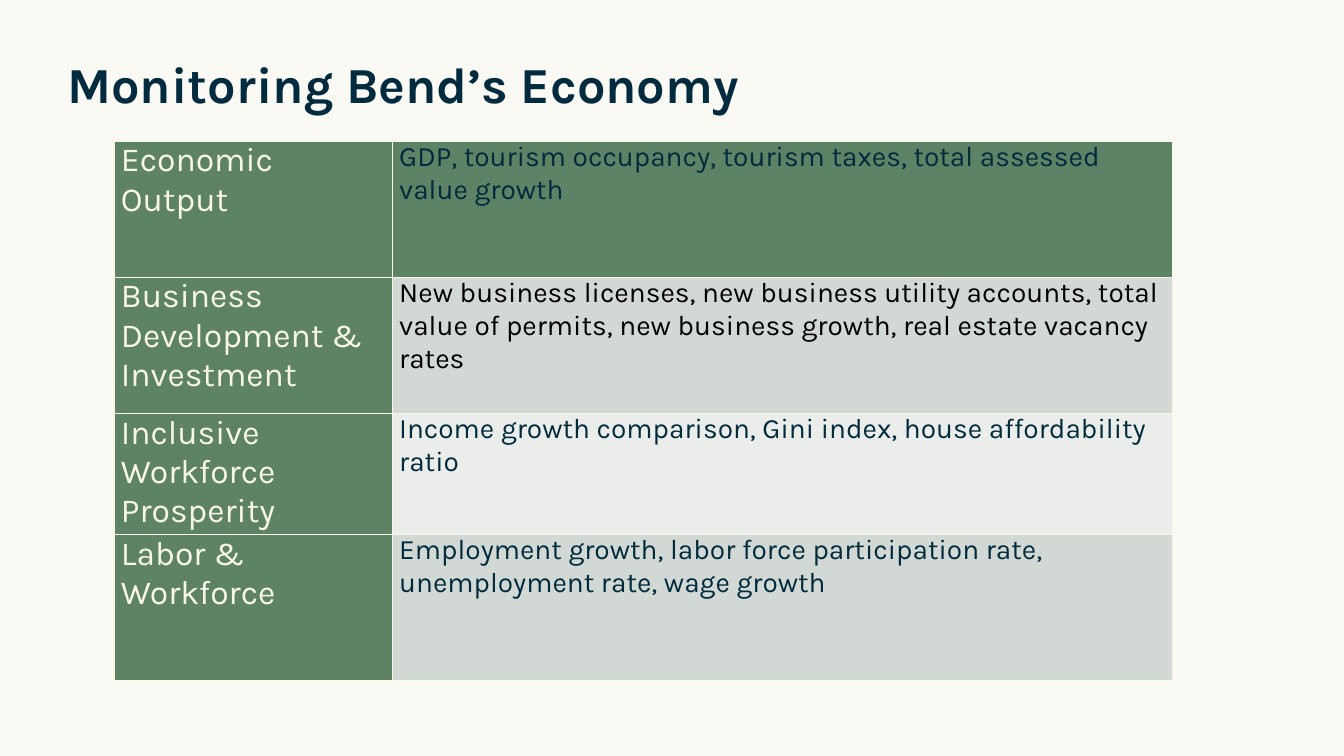
from lxml import etree
from pptx import Presentation
from pptx.dml.color import RGBColor
from pptx.enum.text import MSO_ANCHOR
from pptx.oxml.ns import qn
from pptx.util import Inches, Pt

BOTTOM = MSO_ANCHOR.BOTTOM
FONT = "Karla"
COLORS = {
    "background": "FAF9F3",
    "title": "002B3E",
    "navy": "002B3D",
    "black": "000000",
    "cream": "F8F7E6",
    "green": "5D8266",
    "gray": "D2D8D3",
    "light": "EAEDEA",
}

COLUMN_WIDTHS = (2.76, 7.74)
# Row height, category, indicators, indicator text color, indicator fill
ROWS = (
    (1.35, "Economic Output",
     "GDP, tourism occupancy, tourism taxes, total assessed value growth",
     "navy", "green"),
    (1.35, "Business Development & Investment",
     "New business licenses, new business utility accounts, total value of "
     "permits, new business growth, real estate vacancy rates",
     "black", "gray"),
    (1.17, "Inclusive Workforce Prosperity",
     "Income growth comparison, Gini index, house affordability ratio",
     "navy", "light"),
    (1.45, "Labor & Workforce",
     "Employment growth, labor force participation rate, unemployment rate, "
     "wage growth",
     "navy", "gray"),
)


def rgb(name):
    return RGBColor.from_string(COLORS[name])


def write_text(frame, text, size, color, bold=False):
    frame.word_wrap = True
    para = frame.paragraphs[0]
    para.text = text
    font = para.runs[0].font
    font.name = FONT
    font.size = Pt(size)
    font.bold = bold
    font.color.rgb = rgb(color)
    return para


def add_title(page, text):
    box = page.shapes.add_textbox(Inches(0.57), Inches(0.4), Inches(12.18), Inches(0.78))
    box.text_frame.vertical_anchor = BOTTOM
    para = write_text(box.text_frame, text, 36, "title", bold=True)
    para.line_spacing = 0.9


def add_borders(cell, color):
    properties = cell._tc.get_or_add_tcPr()
    for side in ("a:lnL", "a:lnR", "a:lnT", "a:lnB"):
        line = etree.SubElement(properties, qn(side), w=str(Pt(1)))
        fill = etree.SubElement(line, qn("a:solidFill"))
        etree.SubElement(fill, qn("a:srgbClr"), val=COLORS[color])


def fill_cell(cell, text, size, color, fill):
    cell.margin_left = cell.margin_right = Inches(0.07)
    cell.margin_top = cell.margin_bottom = 0
    write_text(cell.text_frame, text, size, color)
    add_borders(cell, "cream")
    cell.fill.solid()
    cell.fill.fore_color.rgb = rgb(fill)


def add_indicator_table(page):
    height = sum(row[0] for row in ROWS)
    frame = page.shapes.add_table(
        len(ROWS), len(COLUMN_WIDTHS), Inches(1.13), Inches(1.4),
        Inches(sum(COLUMN_WIDTHS)), Inches(height))
    table = frame.table
    for column, width in zip(table.columns, COLUMN_WIDTHS):
        column.width = Inches(width)
    for index, (row_height, category, indicators, color, fill) in enumerate(ROWS):
        table.rows[index].height = Inches(row_height)
        fill_cell(table.cell(index, 0), category, 24, "cream", "green")
        fill_cell(table.cell(index, 1), indicators, 20, color, fill)


def main():
    deck = Presentation()
    deck.slide_width = Inches(13.33)
    deck.slide_height = Inches(7.5)
    page = deck.slides.add_slide(deck.slide_layouts[6])

    # Background
    page.background.fill.solid()
    page.background.fill.fore_color.rgb = rgb("background")

    # Heading and table of indicators
    add_title(page, "Monitoring Bend’s Economy")
    add_indicator_table(page)

    deck.save("out.pptx")


if __name__ == "__main__":
    main()
